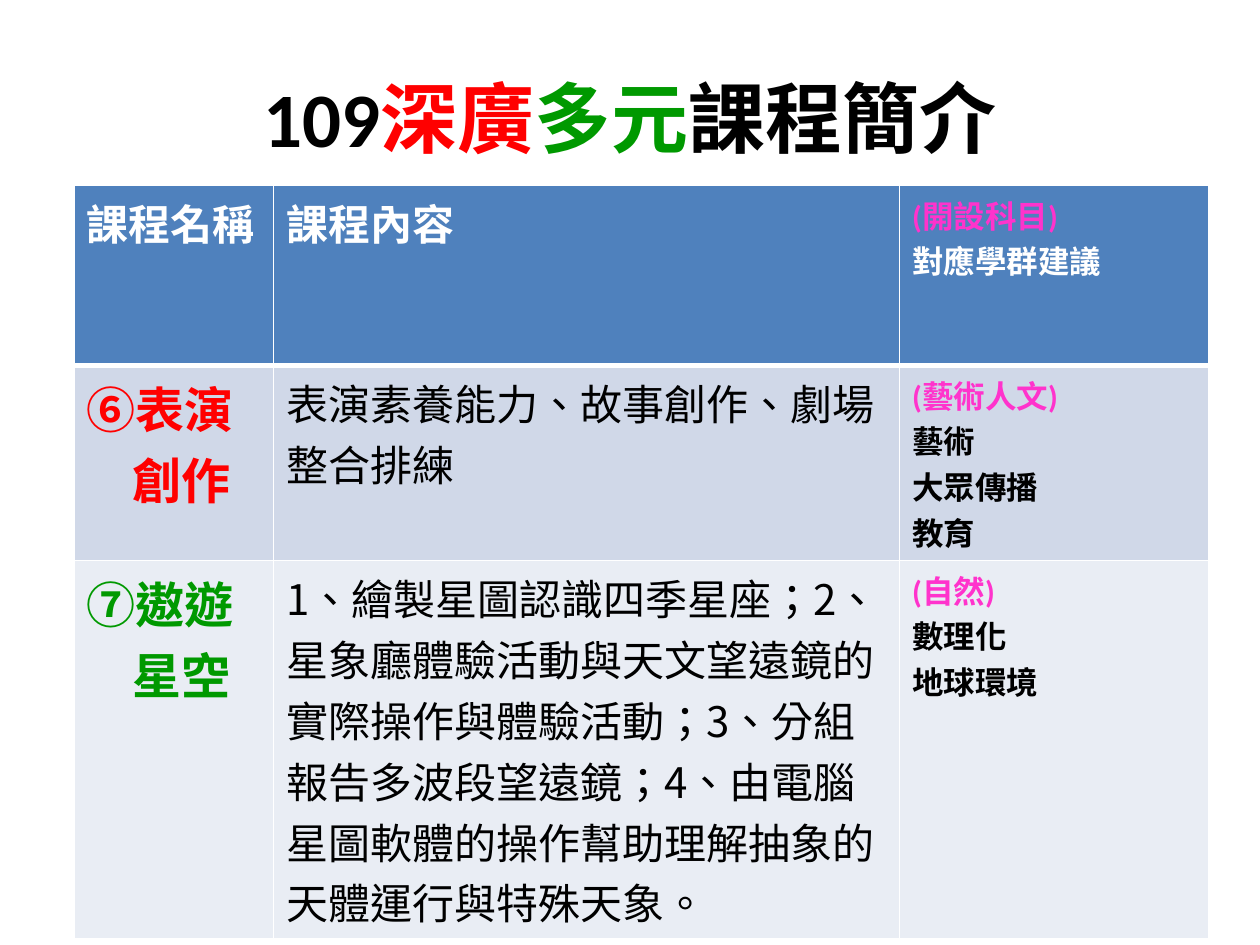
import pptx
import pptx.dml.color
import pptx.enum.lang
import pptx.enum.text
import pptx.oxml.ns
import pptx.util
from lxml import etree
from pptx.util import Inches

RGBColor = pptx.dml.color.RGBColor
BLACK = RGBColor(0x00, 0x00, 0x00)
WHITE = RGBColor(0xFF, 0xFF, 0xFF)
RED = RGBColor(0xFF, 0x00, 0x00)
GREEN = RGBColor(0x00, 0x99, 0x00)
PINK = RGBColor(0xFF, 0x33, 0xCC)
HEADER_BLUE = RGBColor(0x4F, 0x81, 0xBD)
BAND_DARK = RGBColor(0xD0, 0xD8, 0xE8)
BAND_LIGHT = RGBColor(0xE9, 0xED, 0xF4)
LATIN_FONT = "Calibri"
CHINESE_FONT = "Noto Sans CJK SC"
qn = pptx.oxml.ns.qn


def add_run(paragraph, text, size, color, bold=True, font=LATIN_FONT):
    run = paragraph.add_run()
    run.text = text
    run.font.size = pptx.util.Pt(size)
    run.font.bold = bold
    run.font.name = font
    run.font.color.rgb = color
    # Traditional Chinese centres the punctuation marks
    run.font.language_id = pptx.enum.lang.MSO_LANGUAGE_ID.TRADITIONAL_CHINESE
    east_asian = etree.SubElement(run.font._element, qn("a:ea"))
    east_asian.set("typeface", CHINESE_FONT)


def set_borders(cell, bottom_width):
    properties = cell._tc.get_or_add_tcPr()
    widths = {"a:lnL": 1, "a:lnR": 1, "a:lnT": 1, "a:lnB": bottom_width}
    for position, (tag, width) in enumerate(widths.items()):
        line = etree.Element(qn(tag), w=str(pptx.util.Pt(width)))
        fill = etree.SubElement(line, qn("a:solidFill"))
        etree.SubElement(fill, qn("a:srgbClr"), val=str(WHITE))
        properties.insert(position, line)


presentation = pptx.Presentation()
presentation.slide_width = Inches(10)
presentation.slide_height = Inches(7.5)
slide = presentation.slides.add_slide(presentation.slide_layouts[5])

# Title
title = slide.shapes.title
title.left, title.top = Inches(0.5), Inches(0.3)
title.width, title.height = Inches(9), Inches(1.25)
title.text_frame.vertical_anchor = pptx.enum.text.MSO_ANCHOR.MIDDLE
title_paragraph = title.text_frame.paragraphs[0]
title_paragraph.alignment = pptx.enum.text.PP_ALIGN.CENTER
for text, color in [("109", BLACK), ("深廣", RED), ("多元", GREEN), ("課程簡介", BLACK)]:
    add_run(title_paragraph, text, 44, color)

# Course rows: name lines, name colour, content, subject, suggested groups
courses = [
    (["⑥表演", "創作"], RED, "表演素養能力、故事創作、劇場整合排練",
     "(藝術人文)", ["藝術", "大眾傳播", "教育"]),
    (["⑦遨遊", "星空"], GREEN,
     "1、繪製星圖認識四季星座；2、星象廳體驗活動與天文望遠鏡的實際操作與體驗活動；"
     "3、分組報告多波段望遠鏡；4、由電腦星圖軟體的操作幫助理解抽象的天體運行與特殊天象。",
     "(自然)", ["數理化", "地球環境"]),
]

# Each cell is a list of paragraphs: (text, size, colour, bold, font)
rows = [[
    [("課程名稱", 24, WHITE, True, LATIN_FONT)],
    [("課程內容", 24, WHITE, True, LATIN_FONT)],
    [("(開設科目)", 18, PINK, True, LATIN_FONT),
     ("對應學群建議", 18, WHITE, True, LATIN_FONT)],
]]
for names, name_color, content, subject, groups in courses:
    rows.append([
        [(name, 28, name_color, True, LATIN_FONT) for name in names],
        [(content, 24, BLACK, False, CHINESE_FONT)],
        [(subject, 18, PINK, True, LATIN_FONT)]
        + [(group, 18, BLACK, True, LATIN_FONT) for group in groups],
    ])

# Table
frame = slide.shapes.add_table(3, 3, Inches(0.59), Inches(1.47), Inches(9), Inches(5.1))
table = frame.table
for column, width in zip(table.columns, [1.58, 4.97, 2.45]):
    column.width = Inches(width)
for row, height in zip(table.rows, [1.43, 1.54, 3]):
    row.height = Inches(height)

row_fills = [HEADER_BLUE, BAND_DARK, BAND_LIGHT]
for row_index, row_cells in enumerate(rows):
    for column_index, lines in enumerate(row_cells):
        cell = table.cell(row_index, column_index)
        cell.fill.solid()
        cell.fill.fore_color.rgb = row_fills[row_index]
        set_borders(cell, 3 if row_index == 0 else 1)
        for line_index, line in enumerate(lines):
            if line_index == 0:
                paragraph = cell.text_frame.paragraphs[0]
            else:
                paragraph = cell.text_frame.add_paragraph()
            add_run(paragraph, *line)
            # The second line of a course name sits under its first character
            if column_index == 0 and line_index == 1:
                paragraph._p.get_or_add_pPr().set("marL", str(Inches(0.36)))

presentation.save("out.pptx")
